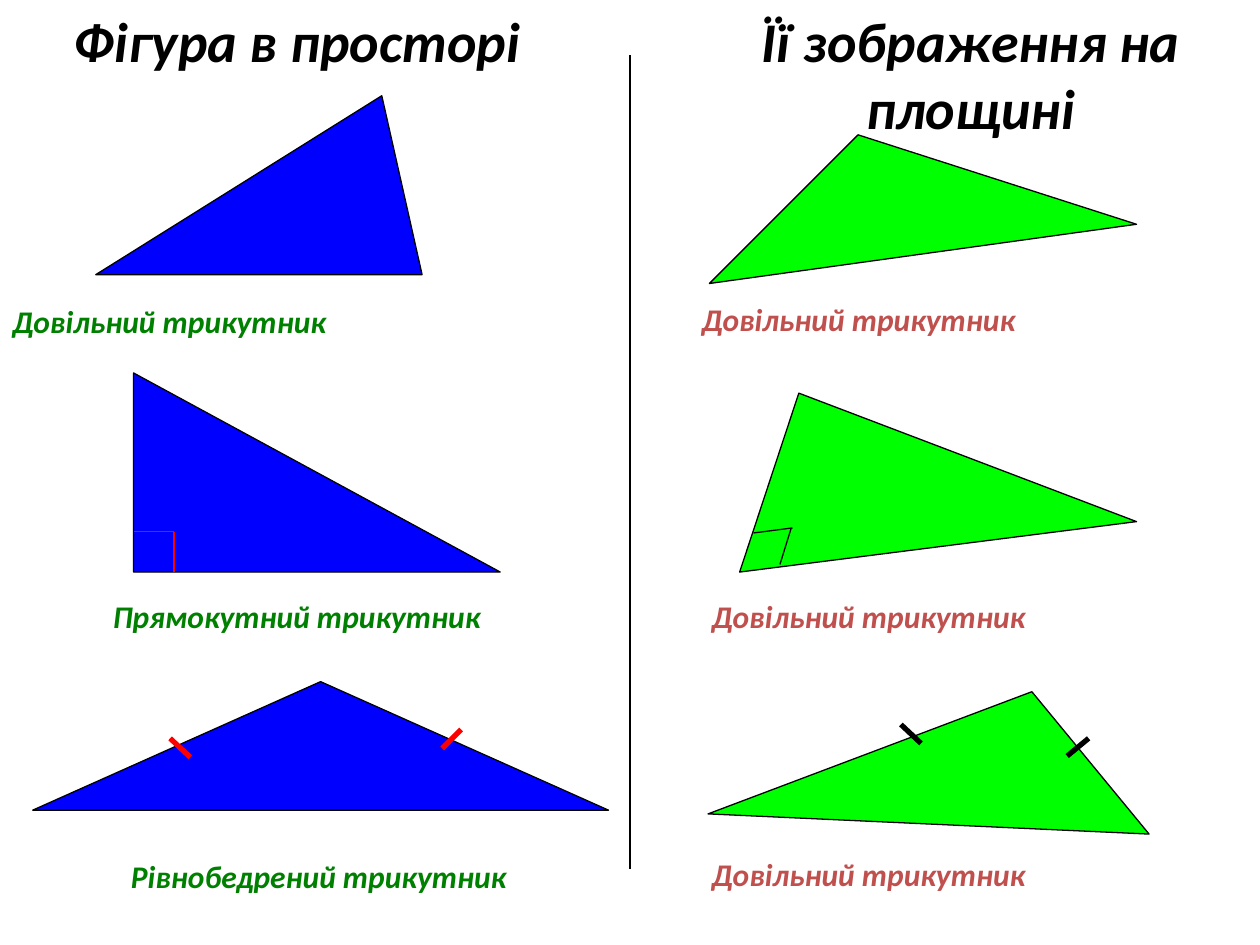
"""Build a slide comparing triangles in space with their images on a plane."""
from pptx import Presentation
from pptx.dml.color import RGBColor
from pptx.enum.shapes import MSO_CONNECTOR, MSO_SHAPE
from pptx.enum.text import MSO_ANCHOR, MSO_AUTO_SIZE, PP_ALIGN
from pptx.oxml.ns import qn
from pptx.util import Inches, Pt
from lxml.etree import SubElement

BLACK = RGBColor(0x00, 0x00, 0x00)
BLUE = RGBColor(0x00, 0x00, 0xFF)
LIME = RGBColor(0x00, 0xFF, 0x00)
RED = RGBColor(0xFF, 0x00, 0x00)
GREEN = RGBColor(0x00, 0x80, 0x00)
BRICK = RGBColor(0xC0, 0x50, 0x4D)


def set_text(sp, text, *, box, size=18, color=BLACK, align=PP_ALIGN.LEFT):
    sp.left, sp.top, sp.width, sp.height = [Inches(v) for v in box]
    tf = sp.text_frame
    tf.word_wrap = True
    tf.auto_size = MSO_AUTO_SIZE.NONE
    tf.vertical_anchor = MSO_ANCHOR.TOP
    p = tf.paragraphs[0]
    p.alignment = align
    r = p.add_run()
    r.text = text
    r.font.name = "Calibri"
    r.font.size = Pt(size)
    r.font.bold = r.font.italic = True
    r.font.color.rgb = color


prs = Presentation()
prs.slide_width, prs.slide_height = Inches(10), Inches(7.5)
s = prs.slides.add_slide(prs.slide_layouts[5])

set_text(s.shapes.title, "Фігура в просторі", box=(0, 0, 4.72, 0.63),
         size=32, align=PP_ALIGN.CENTER)
set_text(s.shapes.add_textbox(0, 0, 0, 0), "Її зображення на площині",
         box=(5.41, 0, 4.59, 1.17), size=32, align=PP_ALIGN.CENTER)

triangles = []
for kind, box in [
    (MSO_SHAPE.RIGHT_TRIANGLE, (1.06, 2.96, 2.91, 1.58)),
    (MSO_SHAPE.ISOSCELES_TRIANGLE, (0.26, 5.41, 4.57, 1.02)),
]:
    sp = s.shapes.add_shape(kind, *[Inches(v) for v in box])
    triangles.append((sp, BLUE))

for color, *corners in [
    (BLUE, (0.76, 2.18), (3.03, 0.76), (3.35, 2.18)),
    (LIME, (5.63, 2.25), (6.81, 1.07), (9.02, 1.78)),
    (LIME, (5.87, 4.54), (6.34, 3.12), (9.02, 4.14)),
    (LIME, (5.62, 6.46), (8.19, 5.49), (9.12, 6.62)),
]:
    points = [(Inches(x), Inches(y)) for x, y in corners]
    builder = s.shapes.build_freeform(*points[0])
    builder.add_line_segments(points[1:], close=True)
    triangles.append((builder.convert_to_shape(), color))

for sp, color in triangles:
    sp.shadow.inherit = False
    sp.fill.solid()
    sp.fill.fore_color.rgb = color
    sp.line.color.rgb = BLACK
    sp.line.width = Pt(0.75)

for text, color, align, box in [
    ("Довільний трикутник", GREEN, PP_ALIGN.LEFT, (0, 2.35, 4.29, 0.5)),
    ("Прямокутний трикутник", GREEN, PP_ALIGN.CENTER, (0, 4.69, 4.71, 0.5)),
    ("Рівнобедрений трикутник", GREEN, PP_ALIGN.CENTER, (0, 6.75, 5.06, 0.5)),
    ("Довільний трикутник", BRICK, PP_ALIGN.LEFT, (5.47, 2.33, 4.24, 0.5)),
    ("Довільний трикутник", BRICK, PP_ALIGN.LEFT, (5.55, 4.69, 4.16, 0.5)),
    ("Довільний трикутник", BRICK, PP_ALIGN.LEFT, (5.55, 6.74, 4.45, 0.5)),
]:
    set_text(s.shapes.add_textbox(0, 0, 0, 0), text, box=box, color=color, align=align)

divider = [(5, 0.44, 5, 6.9)]
space_angle = [(1.06, 4.22, 1.38, 4.22), (1.38, 4.22, 1.38, 4.54)]
plane_angle = [(5.98, 4.23, 6.29, 4.19), (6.28, 4.19, 6.19, 4.48)]
space_ticks = [(1.35, 5.86, 1.51, 6.01), (3.51, 5.94, 3.66, 5.79)]
plane_ticks = [(7.15, 5.75, 7.31, 5.9), (8.64, 5.86, 8.47, 6)]
for lines, color, width in [
    (divider, BLACK, 0.75),
    (space_angle, RED, 0.75),
    (plane_angle, BLACK, 0.75),
    (space_ticks, RED, 3),
    (plane_ticks, BLACK, 3),
]:
    for ends in lines:
        line = s.shapes.add_connector(MSO_CONNECTOR.STRAIGHT, *[Inches(v) for v in ends])
        line.line.color.rgb = color
        line.line.width = Pt(width)
        SubElement(line._element.spPr, qn("a:effectLst"))

prs.save("out.pptx")
